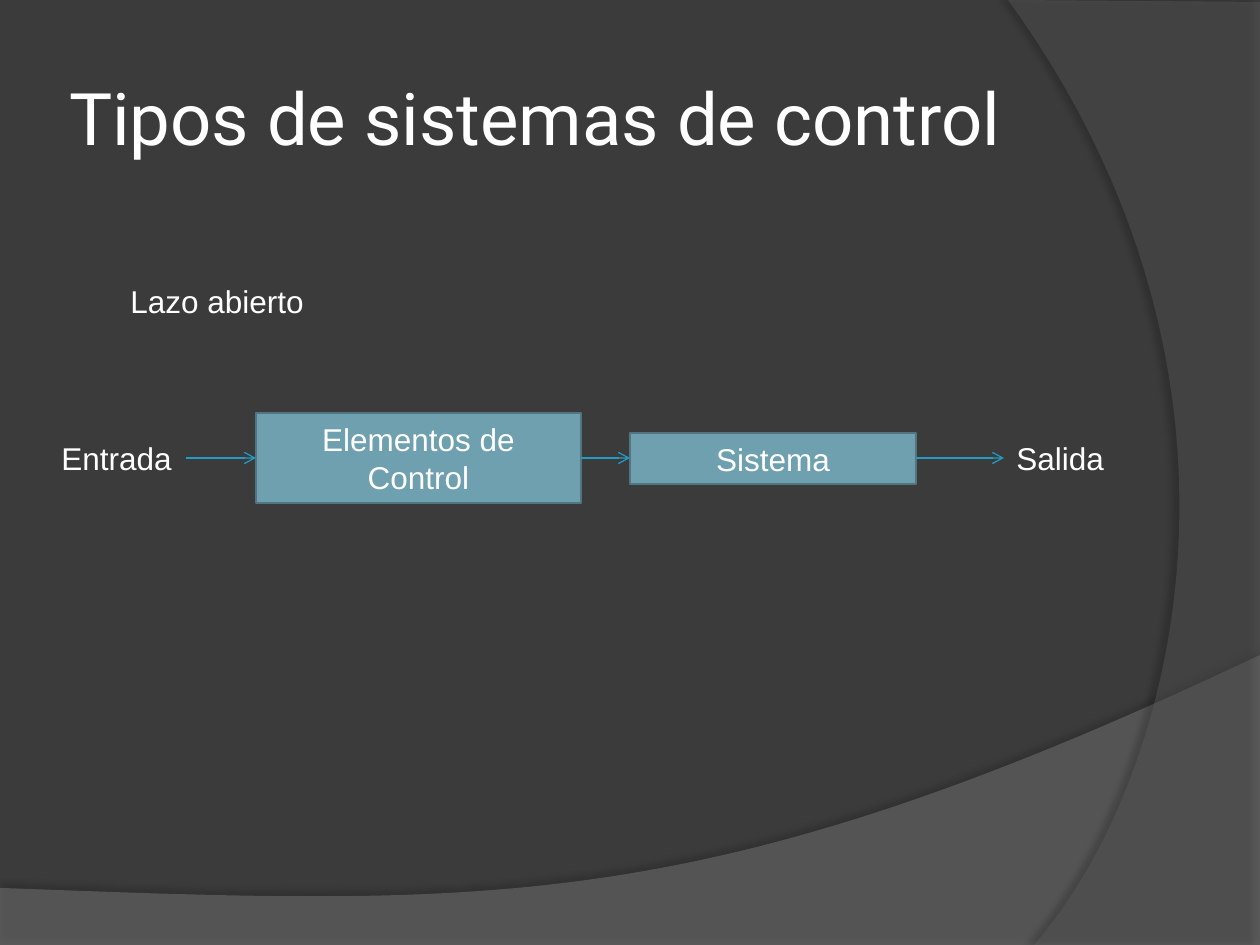
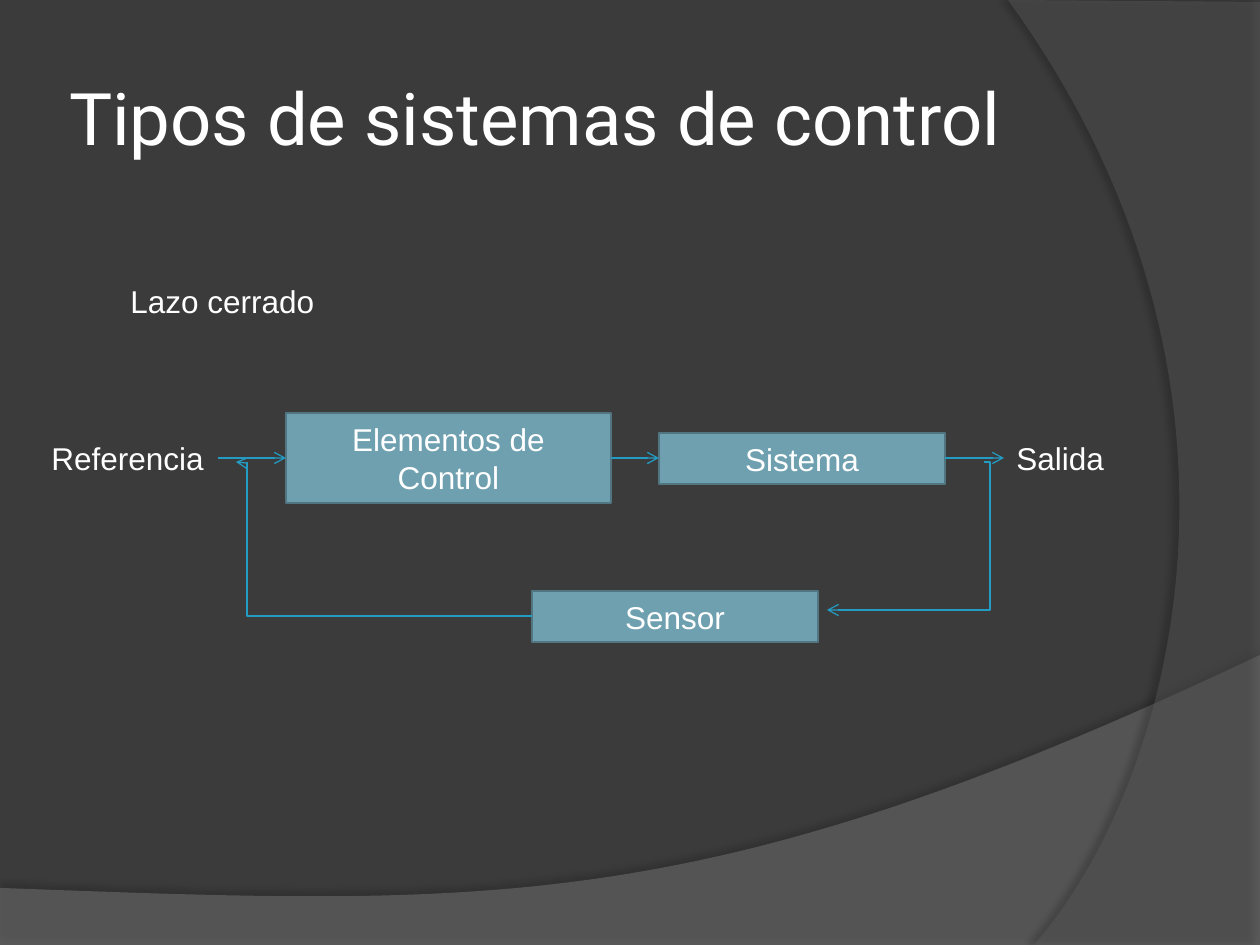
from lxml.etree import SubElement
from pptx import Presentation
from pptx.dml.color import RGBColor
from pptx.enum.shapes import MSO_CONNECTOR as LINE, MSO_SHAPE as SHAPE
from pptx.enum.text import MSO_ANCHOR as ANCHOR, MSO_AUTO_SIZE as FIT, PP_ALIGN as ALIGN
from pptx.oxml.ns import qn
from pptx.util import Emu, Pt

WHITE = RGBColor(0xFF, 0xFF, 0xFF)
DARK = RGBColor(0x3B, 0x3B, 0x3B)
WAVE_GREY = RGBColor(0x7F, 0x7F, 0x7F)
ARC_GREY = RGBColor(0x5E, 0x5E, 0x5E)
BOX_FILL = RGBColor(0x6E, 0xA0, 0xB0)
BOX_EDGE = RGBColor(0x51, 0x76, 0x82)
ARROW = RGBColor(0x23, 0x9B, 0xC2)

PX = 914400 / 126
SLIDE_W, SLIDE_H = 1260, 945
AXIS = 458                      # centre line of the main flow
LINE_H = 51                     # height of a one-line box
TITLE = "Tipos de sistemas de control"
TITLE_FONT = dict(name="Roboto", size=Pt(41.4))
BODY_FONT = dict(name="Arial", size=Pt(18))

# flow: (kind, text, left, width, height); sensor: (text, left, top)
# loops: (start, end, x of the vertical leg)
SLIDES = [
    dict(label=("Lazo abierto", 200),
         flow=[("text", "Entrada", 49, 137, LINE_H),
               ("box", "Elementos de Control", 256, 325, 90),
               ("box", "Sistema", 630, 286, LINE_H),
               ("text", "Salida", 1004, 113, LINE_H)]),
    dict(label=("Lazo cerrado", 210),
         flow=[("text", "Referencia", 39, 179, LINE_H),
               ("box", "Elementos de Control", 286, 325, 90),
               ("box", "Sistema", 659, 286, LINE_H),
               ("text", "Salida", 1004, 113, LINE_H)],
         feedback=("Sensor", 532, 591, 286),
         loops=[((984, 462), (827, 610), 990),
                ((532, 616), (236, 462), 247)]),
]

# outline: straight corners, then one Bezier curve from the last corner
# shadow: opacity %, blur pt, distance pt, direction in degrees
BANDS = [
    dict(corners=[(0, 888), (0, 946), (1260, 946), (1260, 655)],
         curve=[(704, 919), (493, 906), (0, 888)],
         color=WAVE_GREY, opacity=45, shadow=(35, 4, 3.5, 270)),
    dict(corners=[(1260, 2), (1260, 945), (1034, 945)],
         curve=[(1178, 780), (1283, 378), (1008, 0)],
         color=ARC_GREY, opacity=40, shadow=(45, 4, 4, 180)),
]


def px(*values):
    return [Emu(round(v * PX)) for v in values]


def bezier(p0, p1, p2, p3, steps=60):
    for i in range(1, steps + 1):
        t = i / steps
        u = 1 - t
        yield tuple(u**3 * a + 3 * u * u * t * b + 3 * u * t * t * c + t**3 * d
                    for a, b, c, d in zip(p0, p1, p2, p3))


def add_band(slide, corners, curve, color, opacity, shadow):
    points = corners + list(bezier(corners[-1], *curve))
    points = [tuple(px(*point)) for point in points]
    builder = slide.shapes.build_freeform(*points[0])
    builder.add_line_segments(points[1:], close=True)
    sp = builder.convert_to_shape()
    sp.fill.solid()
    sp.fill.fore_color.rgb = color
    sp.line.fill.background()
    sp.shadow.inherit = False
    spPr = sp._element.spPr
    fill = spPr.find(qn("a:solidFill")).find(qn("a:srgbClr"))
    SubElement(fill, qn("a:alpha"), val=str(opacity * 1000))

    strength, blur, dist, angle = shadow
    outer = SubElement(spPr.find(qn("a:effectLst")), qn("a:outerShdw"),
                       blurRad=str(Pt(blur)), dist=str(Pt(dist)),
                       dir=str(angle * 60000), rotWithShape="0")
    black = SubElement(outer, qn("a:srgbClr"), val="000000")
    SubElement(black, qn("a:alpha"), val=str(strength * 1000))


def write(sp, text, font, align=ALIGN.LEFT, **frame):
    tf = sp.text_frame
    for name, value in frame.items():
        setattr(tf, name, value)
    p = tf.paragraphs[0]
    p.alignment = align
    r = p.add_run()
    r.text = text
    for name, value in font.items():
        setattr(r.font, name, value)
    r.font.color.rgb = WHITE


def add_text(slide, text, *place):
    sp = slide.shapes.add_textbox(*px(*place))
    write(sp, text, BODY_FONT, word_wrap=False, auto_size=FIT.SHAPE_TO_FIT_TEXT)


def add_box(slide, text, *place):
    sp = slide.shapes.add_shape(SHAPE.RECTANGLE, *px(*place))
    sp.shadow.inherit = False
    sp.fill.solid()
    sp.fill.fore_color.rgb = BOX_FILL
    sp.line.color.rgb = BOX_EDGE
    sp.line.width = Pt(1.5)
    write(sp, text, BODY_FONT, ALIGN.CENTER, word_wrap=True,
          auto_size=FIT.SHAPE_TO_FIT_TEXT)


def add_arrow(slide, start, end, bend=None):
    """Straight arrow, or an elbow whose vertical leg is at x = bend."""
    kind = LINE.STRAIGHT if bend is None else LINE.ELBOW
    sp = slide.shapes.add_connector(kind, *px(*start, *end))
    sp.line.color.rgb = ARROW
    sp.line.width = Pt(0.75)
    spPr = sp._element.spPr
    SubElement(spPr.find(qn("a:ln")), qn("a:tailEnd"), type="arrow")
    SubElement(spPr, qn("a:effectLst"))
    if bend is not None:
        ratio = (bend - start[0]) / (end[0] - start[0])
        guides = spPr.find(qn("a:prstGeom")).find(qn("a:avLst"))
        SubElement(guides, qn("a:gd"), name="adj1",
                   fmla=f"val {round(ratio * 100000)}")


def add_flow(slide, flow):
    draw = dict(text=add_text, box=add_box)
    for kind, text, left, width, height in flow:
        draw[kind](slide, text, left, AXIS - height // 2, width, height)
    for (_, _, left, width, _), (_, _, target, _, _) in zip(flow, flow[1:]):
        add_arrow(slide, (left + width, AXIS), (target, AXIS))


def add_slide(prs, label, flow, feedback=None, loops=()):
    slide = prs.slides.add_slide(prs.slide_layouts[6])
    for band in BANDS:
        add_band(slide, **band)
    title = slide.shapes.add_textbox(*px(63, 38, 1029, 158))
    inset = px(6)[0]
    write(title, TITLE, TITLE_FONT, word_wrap=True, vertical_anchor=ANCHOR.MIDDLE,
          margin_left=inset, margin_right=inset, margin_top=inset, margin_bottom=inset)
    text, width = label
    add_text(slide, text, 118, 276, width, LINE_H)
    add_flow(slide, flow)
    if feedback:
        add_box(slide, *feedback, LINE_H)
    for loop in loops:
        add_arrow(slide, *loop)


def main():
    prs = Presentation()
    prs.slide_width, prs.slide_height = px(SLIDE_W, SLIDE_H)
    background = prs.slide_master.background.fill
    background.solid()
    background.fore_color.rgb = DARK
    for content in SLIDES:
        add_slide(prs, **content)
    prs.save("out.pptx")


if __name__ == "__main__":
    main()
